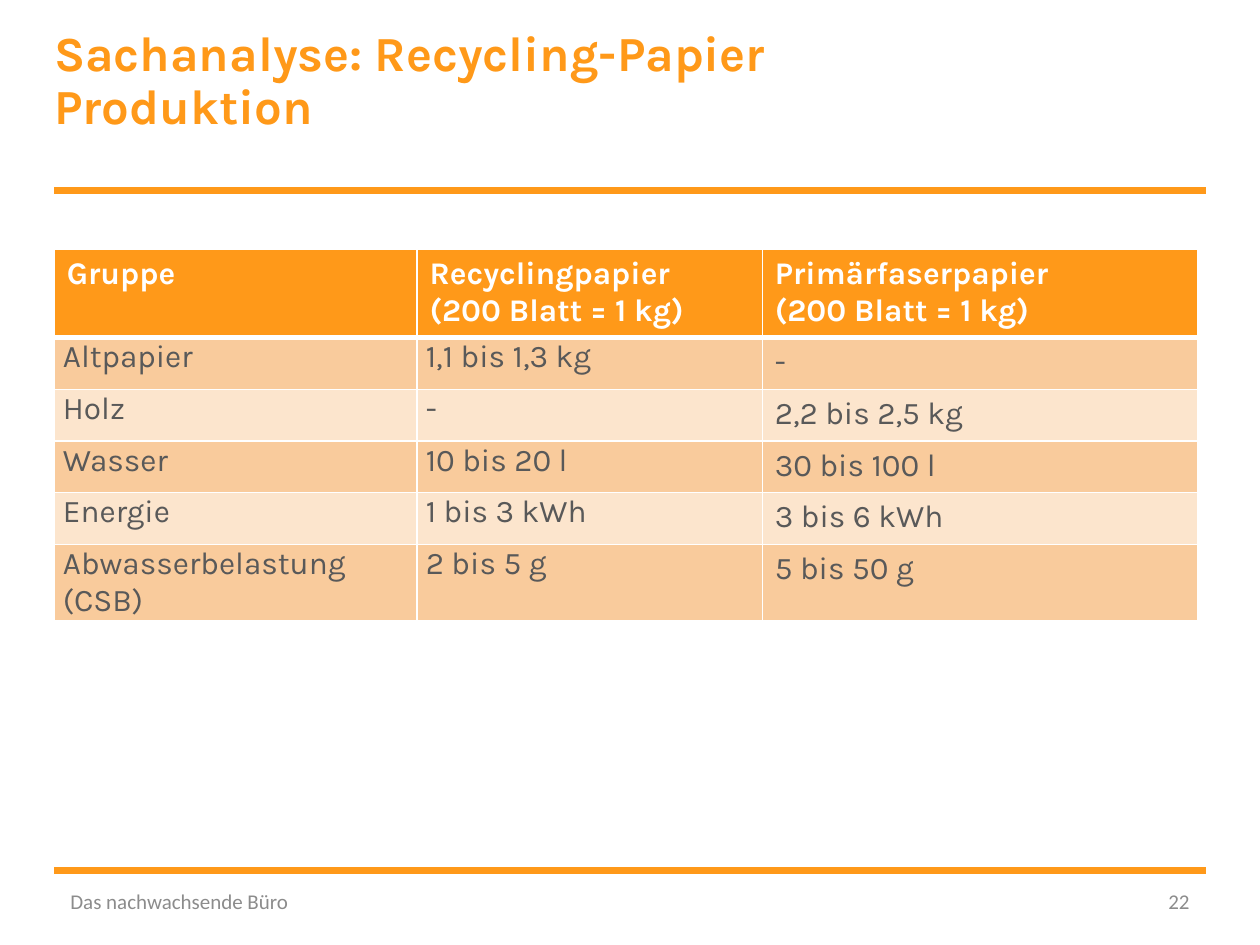
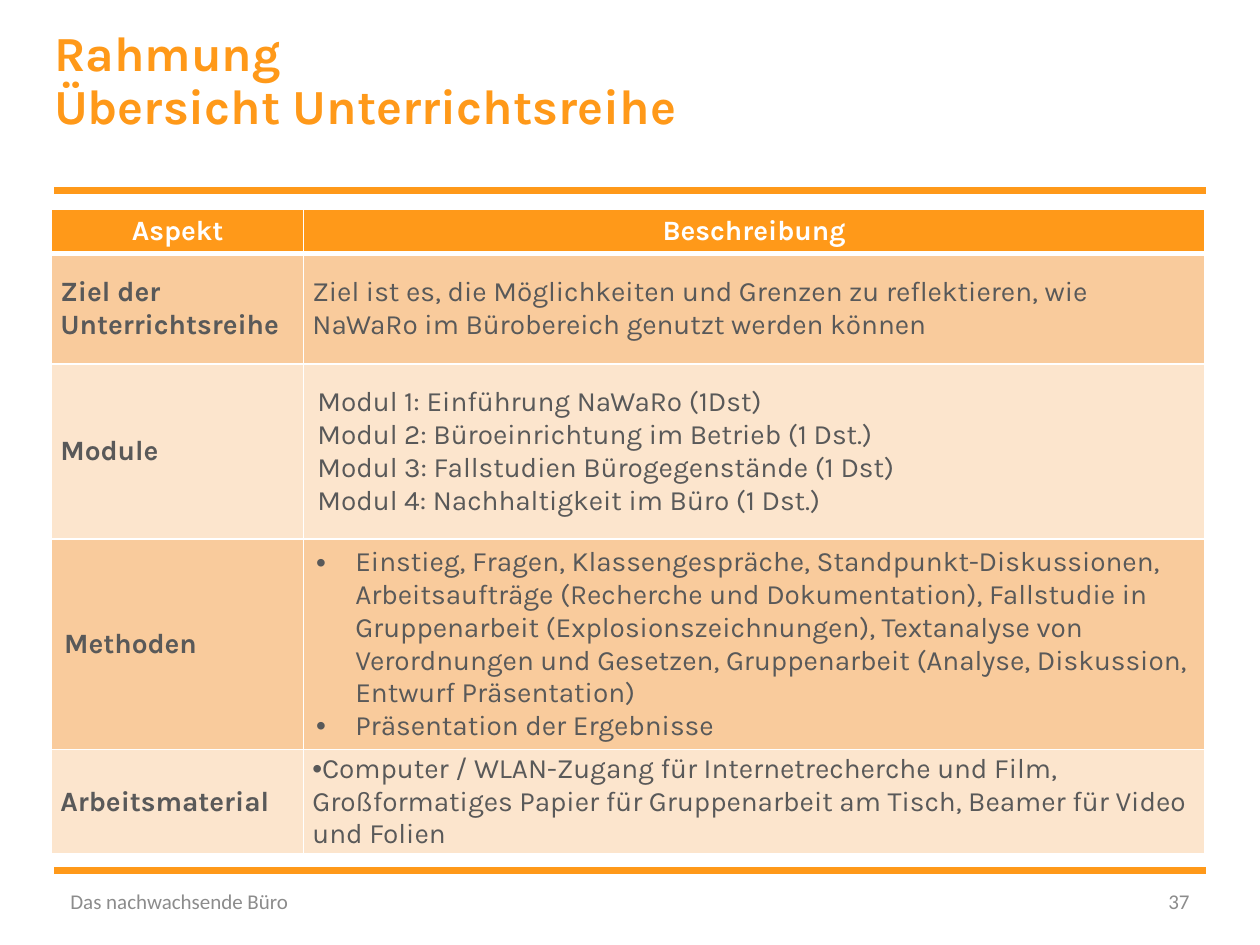
from dataclasses import dataclass

from lxml import etree
from pptx import Presentation
from pptx import util as u
from pptx.dml.color import RGBColor
from pptx.enum import shapes, text
from pptx.oxml import ns


@dataclass(frozen=True)
class Theme:
    accent: str = "FF9919"
    bands: tuple = ("F9CB9C", "FCE5CD")
    white: str = "FFFFFF"
    body: str = "595959"
    muted: str = "8C8C8C"
    font: str = "Karla"
    footer_font: str = "Calibri"
    title_size: int = 28
    large_size: int = 18
    medium_size: int = 16
    footer_size: int = 12


@dataclass(frozen=True)
class CellStyle:
    size: int
    color: str
    bold: bool = False
    insets: tuple = (0.1, 0.05, 0.1, 0.05)
    anchor: object = text.MSO_ANCHOR.TOP
    align: object = text.PP_ALIGN.LEFT
    before: int = 0
    after: int = 0
    margin: float = 0
    hanging: float = 0
    bullet: str = ""


class Deck:
    def __init__(self, theme):
        self.theme = theme
        self.presentation = Presentation()
        self.presentation.slide_width = u.Inches(10)
        self.presentation.slide_height = u.Inches(7.5)
        self.slide = None

    def add_slide(self, title, number):
        self.slide = self.presentation.slides.add_slide(self.presentation.slide_layouts[6])
        for y in (1.51, 6.91):
            self.rule(y)
        self.title(title)
        self.footer("Das nachwachsende Büro", 0.46, 3.38, text.PP_ALIGN.LEFT)
        self.footer(str(number), 8.93, 0.61, text.PP_ALIGN.RIGHT)

    def rule(self, y):
        rule = self.slide.shapes.add_connector(
            shapes.MSO_CONNECTOR.STRAIGHT,
            u.Inches(0.43), u.Inches(y), u.Inches(9.57), u.Inches(y))
        rule.line.color.rgb = RGBColor.from_string(self.theme.accent)
        rule.line.width = u.Pt(4)
        etree.SubElement(rule._element.spPr, ns.qn("a:effectLst"))

    def textbox(self, content, left, top, width, height):
        frame = self.slide.shapes.add_textbox(
            u.Inches(left), u.Inches(top), u.Inches(width), u.Inches(height)).text_frame
        frame.word_wrap = True
        frame.text = content
        return frame

    def format_runs(self, paragraph, font, size, color, bold=False):
        for run in paragraph.runs:
            run.font.name = font
            run.font.size = u.Pt(size)
            run.font.bold = bold
            run.font.color.rgb = RGBColor.from_string(color)

    def title(self, content):
        frame = self.textbox(content, 0.43, 0.23, 6.69, 1.17)
        frame.margin_left = frame.margin_top = frame.margin_right = frame.margin_bottom = 0
        heading = frame.paragraphs[0]
        heading.line_spacing = 0.9
        self.format_runs(heading, self.theme.font, self.theme.title_size, self.theme.accent, True)

    def footer(self, content, left, width, align):
        frame = self.textbox(content, left, 6.95, width, 0.4)
        frame.vertical_anchor = text.MSO_ANCHOR.MIDDLE
        note = frame.paragraphs[0]
        note.alignment = align
        self.format_runs(note, self.theme.footer_font, self.theme.footer_size, self.theme.muted)

    def border(self, cell, side, points):
        line = etree.SubElement(cell._tc.get_or_add_tcPr(), ns.qn(f"a:ln{side}"), w=str(u.Pt(points)))
        fill = etree.SubElement(line, ns.qn("a:solidFill"))
        etree.SubElement(fill, ns.qn("a:srgbClr"), val=self.theme.white)

    def fill_cell(self, cell, content, style, row):
        for side in "LRTB":
            below_header = (row, side) in ((0, "B"), (1, "T"))
            self.border(cell, side, 3 if below_header else 1)
        cell.fill.solid()
        fill = self.theme.bands[(row - 1) % 2] if row else self.theme.accent
        cell.fill.fore_color.rgb = RGBColor.from_string(fill)
        cell.margin_left, cell.margin_top, cell.margin_right, cell.margin_bottom = map(
            u.Inches, style.insets)
        cell.vertical_anchor = style.anchor
        cell.text_frame.text = content
        for index, paragraph in enumerate(cell.text_frame.paragraphs):
            properties = paragraph._p.get_or_add_pPr()
            properties.set("marL", str(u.Inches(style.margin)))
            properties.set("indent", str(u.Inches(style.hanging)))
            if style.bullet:
                etree.SubElement(properties, ns.qn("a:buFont"), typeface="Arial")
                etree.SubElement(properties, ns.qn("a:buChar"), char=style.bullet)
            paragraph.alignment = style.align
            if index:
                paragraph.space_before = u.Pt(style.before)
            paragraph.space_after = u.Pt(style.after)
            self.format_runs(paragraph, self.theme.font, style.size, style.color, style.bold)

    def table(self, left, top, widths, heights, rows):
        grid = self.slide.shapes.add_table(
            len(heights), len(widths), u.Inches(left), u.Inches(top),
            u.Inches(sum(widths)), u.Inches(sum(heights))).table
        for column, width in zip(grid.columns, widths):
            column.width = u.Inches(width)
        for row, height in zip(grid.rows, heights):
            row.height = u.Inches(height)
        for r, row in enumerate(rows):
            for c, (content, style) in enumerate(row):
                self.fill_cell(grid.cell(r, c), content, style, r)


def add_production(deck):
    theme = deck.theme
    deck.add_slide("Sachanalyse: Recycling-Papier\vProduktion", 22)
    header = CellStyle(theme.large_size, theme.white, bold=True)
    primary = CellStyle(theme.large_size, theme.body)
    tight = CellStyle(theme.large_size, theme.body, insets=(0.07, 0.01, 0.07, 0), after=6)
    headings = ("Gruppe", "Recyclingpapier\n(200 Blatt = 1 kg)", "Primärfaserpapier\n(200 Blatt = 1 kg)")
    consumption = (
        ("Altpapier", "1,1 bis 1,3 kg", "-"),
        ("Holz", "-", "2,2 bis 2,5 kg"),
        ("Wasser", "10 bis 20 l", "30 bis 100 l"),
        ("Energie", "1 bis 3 kWh", "3 bis 6 kWh"),
        ("Abwasserbelastung (CSB)", "2 bis 5 g", "5 bis 50 g"),
    )
    rows = [[(heading, header) for heading in headings]]
    rows += [list(zip(group, (tight, tight, primary))) for group in consumption]
    deck.table(0.43, 1.98, (2.88, 2.74, 3.46), [0.41] * len(rows), rows)


def add_overview(deck):
    theme = deck.theme
    deck.add_slide("Rahmung\vÜbersicht Unterrichtsreihe", 37)

    def style(color=theme.body, **options):
        return CellStyle(theme.medium_size, color, insets=(0.07, 0, 0.07, 0),
                         anchor=text.MSO_ANCHOR.MIDDLE, **options)

    header = style(theme.white, bold=True, align=text.PP_ALIGN.CENTER, before=3, after=3)
    aspect = style(bold=True)
    modules = "\n".join((
        "Modul 1: Einführung NaWaRo (1Dst)",
        "Modul 2: Büroeinrichtung im Betrieb (1 Dst.)",
        "Modul 3: Fallstudien Bürogegenstände (1 Dst)",
        "Modul 4: Nachhaltigkeit im Büro (1 Dst.)",
    ))
    methods = (
        "Einstieg, Fragen, Klassengespräche, Standpunkt-Diskussionen, "
        "Arbeitsaufträge (Recherche und Dokumentation), Fallstudie in "
        "Gruppenarbeit (Explosionszeichnungen), Textanalyse von "
        "Verordnungen und Gesetzen, Gruppenarbeit (Analyse, Diskussion, "
        "Entwurf Präsentation)\nPräsentation der Ergebnisse"
    )
    goal = ("Ziel ist es, die Möglichkeiten und Grenzen zu reflektieren, wie "
            "NaWaRo im Bürobereich genutzt werden können")
    material = ("Computer / WLAN-Zugang für Internetrecherche und Film, "
                "Großformatiges Papier für Gruppenarbeit am Tisch, Beamer für Video und Folien")
    rows = (
        (("Aspekt", header), ("Beschreibung", header)),
        (("Ziel der Unterrichtsreihe", aspect), (goal, style())),
        (("Module", aspect), (modules, style(margin=0.04))),
        (("Methoden", style(bold=True, margin=0.03)),
         (methods, style(margin=0.34, hanging=-0.31, bullet="•"))),
        (("Arbeitsmaterial", aspect), (material, style(hanging=-0.31, bullet="•"))),
    )
    deck.table(0.41, 1.66, (2, 7.15), (0.35, 0.88, 1.39, 1.67, 0.83), rows)


def main():
    deck = Deck(Theme())
    add_production(deck)
    add_overview(deck)
    deck.presentation.save("out.pptx")


if __name__ == "__main__":
    main()
